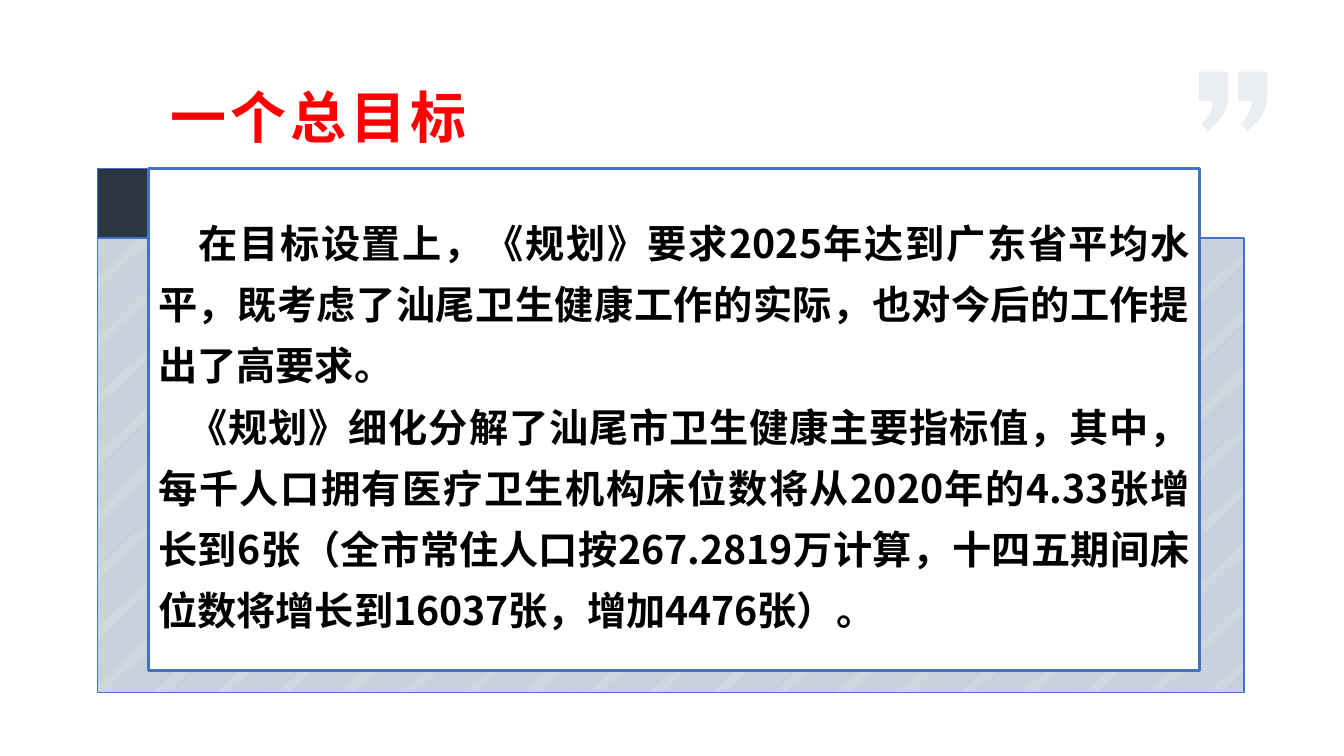
from lxml import etree
from pptx import Presentation
from pptx.dml.color import RGBColor
from pptx.enum.dml import MSO_PATTERN
from pptx.enum.shapes import MSO_SHAPE
from pptx.enum.text import MSO_ANCHOR, MSO_AUTO_SIZE, PP_ALIGN
from pptx.oxml.ns import qn
from pptx.util import Pt

PX = 9144  # 100 px to the inch
RECTANGLE = MSO_SHAPE.RECTANGLE
DIAGONAL = MSO_PATTERN.LIGHT_UPWARD_DIAGONAL
MIDDLE = MSO_ANCHOR.MIDDLE
LEFT, JUSTIFY = PP_ALIGN.LEFT, PP_ALIGN.JUSTIFY
NO_AUTOFIT = MSO_AUTO_SIZE.NONE

COLOURS = {
    "navy": "2C3643", "border": "4472C4", "hatch": "93A3B8",
    "pale": "D6DCE4", "white": "FFFFFF", "black": "000000", "red": "FF0000",
}
CJK_FONT = "Noto Sans CJK SC"

# First-line indent in px, then the text
GOALS = [
    (40, "在目标设置上，《规划》要求2025年达到广东省平均水平，既考虑了汕尾卫生健康"
         "工作的实际，也对今后的工作提出了高要求。"),
    (30, "《规划》细化分解了汕尾市卫生健康主要指标值，其中，每千人口拥有医疗卫生机构"
         "床位数将从2020年的4.33张增长到6张（全市常住人口按267.2819万计算，十四五期间"
         "床位数将增长到16037张，增加4476张）。"),
]


def curve(start, control_1, control_2, end, steps=10):
    """Points along a cubic curve, without its start."""
    points = []
    for step in range(1, steps + 1):
        t = step / steps
        weights = ((1 - t) ** 3, 3 * t * (1 - t) ** 2, 3 * t * t * (1 - t), t ** 3)
        corners = (start, control_1, control_2, end)
        points.append(tuple(sum(w * corner[axis] for w, corner in zip(weights, corners))
                            for axis in (0, 1)))
    return points


# Outline of one quotation mark, from its top left corner
QUOTE_MARK = [
    (29, 0), (29, 26),
    *curve((29, 26), (28, 47), (9, 58), (9, 59)),
    (8, 57),
    *curve((8, 57), (7, 55), (5, 54), (3, 53)),
    (2, 52),
    *curve((2, 52), (2, 52), (13, 44), (14, 29)),
    (0, 29),
]


class SlideBuilder:
    def __init__(self, slide):
        self.slide = slide

    def colour(self, name):
        return RGBColor.from_string(COLOURS[name])

    def place(self, shape, left, top, width, height):
        shape.left, shape.top = left * PX, top * PX
        shape.width, shape.height = width * PX, height * PX

    def paint(self, shape, fill, line_width, pattern_colour=None):
        if pattern_colour:
            shape.fill.patterned()
            shape.fill.pattern = DIAGONAL
            shape.fill.fore_color.rgb = self.colour(pattern_colour)
            shape.fill.back_color.rgb = self.colour(fill)
        else:
            shape.fill.solid()
            shape.fill.fore_color.rgb = self.colour(fill)
        shape.line.color.rgb = self.colour("border")
        shape.line.width = Pt(line_width)

    def rectangle(self, box, fill, pattern_colour=None):
        shape = self.slide.shapes.add_shape(
            RECTANGLE, *(length * PX for length in box))
        shape.shadow.inherit = False
        self.paint(shape, fill, 1, pattern_colour)

    def run(self, paragraph, text, size, colour, latin, spacing=0):
        run = paragraph.add_run()
        run.text = text
        run.font.size = Pt(size)
        run.font.bold = True
        run.font.color.rgb = self.colour(colour)
        run.font.name = latin
        properties = run.font._element
        etree.SubElement(properties, qn("a:ea")).set("typeface", CJK_FONT)
        if spacing:
            properties.set("spc", str(spacing * 100))

    def title(self, text, box):
        title = self.slide.shapes.title
        self.place(title, *box)
        frame = title.text_frame
        frame.word_wrap, frame.auto_size = True, NO_AUTOFIT
        frame.vertical_anchor = MIDDLE
        frame.margin_left = 0
        paragraph = frame.paragraphs[0]
        paragraph.alignment, paragraph.line_spacing = LEFT, 1.0
        self.run(paragraph, text, 40, "red", "Arial", spacing=3)

    def body(self, paragraphs, box):
        body = self.slide.placeholders[1]
        body.element.getparent().append(body.element)  # in front of the frame
        self.place(body, *box)
        self.paint(body, "white", 2.25)
        frame = body.text_frame
        frame.word_wrap, frame.auto_size = True, NO_AUTOFIT
        frame.vertical_anchor = MIDDLE
        for index, (indent, text) in enumerate(paragraphs):
            paragraph = frame.add_paragraph() if index else frame.paragraphs[0]
            paragraph.alignment, paragraph.line_spacing = JUSTIFY, 1.3
            paragraph.space_before = Pt(0)
            properties = paragraph._p.get_or_add_pPr()
            properties.set("marL", "0")
            properties.set("indent", str(indent * PX))
            etree.SubElement(properties, qn("a:buNone"))
            self.run(paragraph, text, 28, "black", CJK_FONT)

    def quote_marks(self, lefts, top):
        group = self.slide.shapes.add_group_shape()
        for left in lefts:
            builder = group.shapes.build_freeform(left * PX, top * PX)
            builder.add_line_segments(
                [((left + x) * PX, (top + y) * PX) for x, y in QUOTE_MARK])
            mark = builder.convert_to_shape()
            mark.shadow.inherit = False
            mark.fill.solid()
            mark.fill.fore_color.rgb = self.colour("pale")
            colour = mark.element.spPr.find(qn("a:solidFill"))[0]
            etree.SubElement(colour, qn("a:alpha")).set("val", "50000")
            mark.line.fill.background()


def main():
    presentation = Presentation()
    presentation.slide_width, presentation.slide_height = 1333 * PX, 750 * PX
    slide = presentation.slides.add_slide(presentation.slide_layouts[1])
    builder = SlideBuilder(slide)

    # Frame behind the text
    builder.rectangle((97, 167, 50, 70), "navy")
    builder.rectangle((97, 236, 1137, 451), "pale", pattern_colour="hatch")

    # Title and text
    builder.title("一个总目标", (169, 81, 669, 69))
    builder.body(GOALS, (147, 167, 1043, 498))

    # Closing quotation marks
    builder.quote_marks((1189, 1228), 71)

    presentation.save("out.pptx")


if __name__ == "__main__":
    main()
